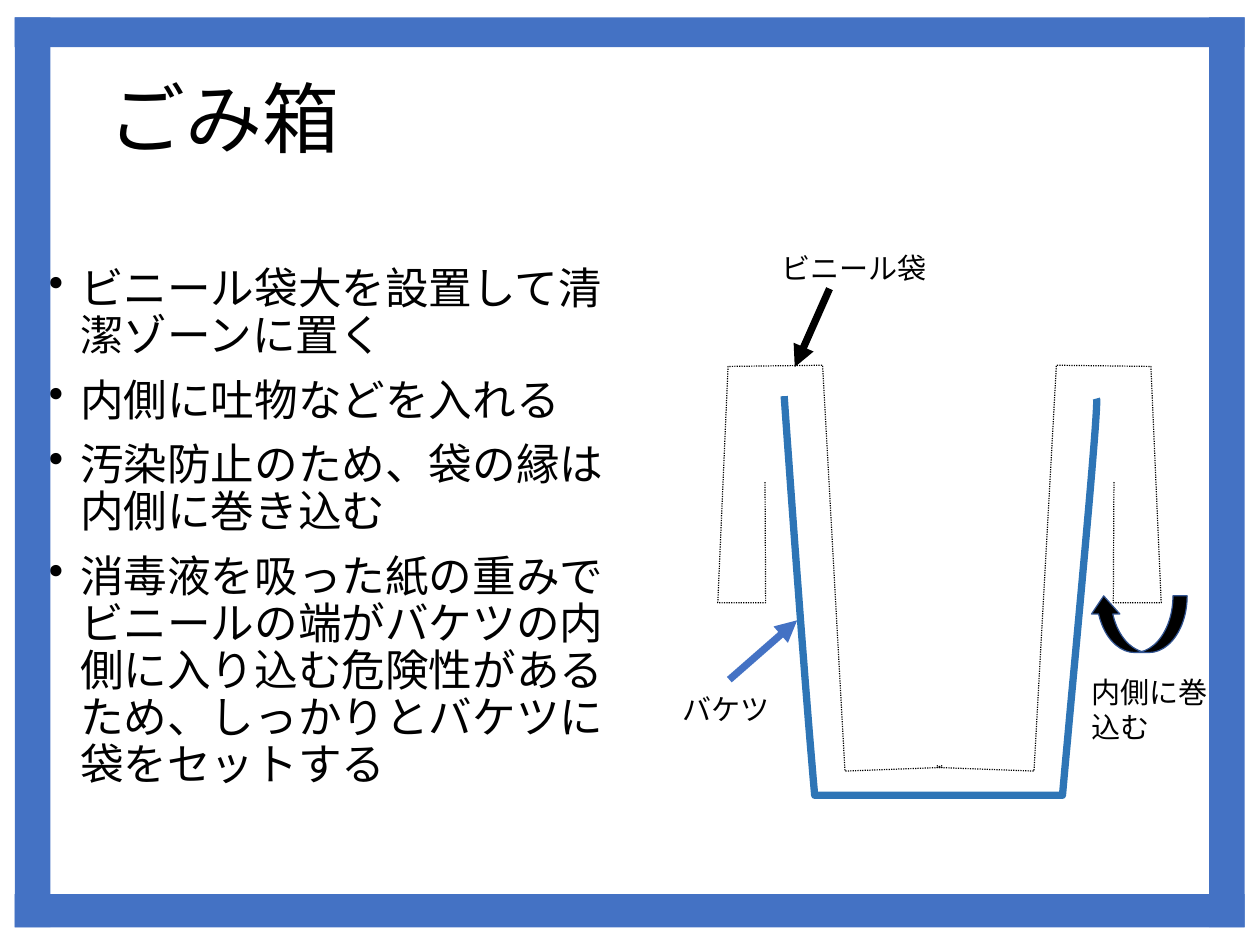
from dataclasses import dataclass

from lxml.etree import SubElement
from pptx import Presentation
from pptx.dml.color import RGBColor
from pptx.enum.dml import MSO_LINE
from pptx.enum.shapes import MSO_CONNECTOR, MSO_SHAPE
from pptx.enum.text import MSO_ANCHOR
from pptx.oxml.ns import qn
from pptx.util import Pt


@dataclass(frozen=True)
class Theme:
    font: str = "Calibri"
    title_size: float = 63.5
    body_size: float = 36
    label_size: float = 24
    thick: float = 6
    thin: float = 1
    ink: RGBColor = RGBColor(0, 0, 0)
    frame: RGBColor = RGBColor(0x44, 0x72, 0xC4)
    bucket: RGBColor = RGBColor(0x2E, 0x75, 0xB6)
    outline: RGBColor = RGBColor(0x32, 0x54, 0x91)


THEME = Theme()
BULLETS = [
    "ビニール袋大を設置して清潔ゾーンに置く",
    "内側に吐物などを入れる",
    "汚染防止のため、袋の縁は内側に巻き込む",
    "消毒液を吸った紙の重みでビニールの端がバケツの内側に入り込む危険性があるため、しっかりとバケツに袋をセットする",
]


def add_text(slide, box, lines, size):
    """Add a wrapping text box with one paragraph per line."""
    text_frame = slide.shapes.add_textbox(*map(Pt, box)).text_frame
    text_frame.word_wrap = True
    text_frame.text = "\n".join(lines)
    for paragraph in text_frame.paragraphs:
        paragraph.font.name = THEME.font
        paragraph.font.size = Pt(size)
        paragraph.font.color.rgb = THEME.ink
    return text_frame


def add_outline(slide, points, color, width):
    """Add an open, unfilled outline through the points."""
    start, *rest = [(Pt(x), Pt(y)) for x, y in points]
    builder = slide.shapes.build_freeform(*start)
    builder.add_line_segments(rest, close=False)
    shape = builder.convert_to_shape()
    shape.shadow.inherit = False
    shape.fill.background()
    shape.line.color.rgb = color
    shape.line.width = Pt(width)
    return shape


def add_arrow(slide, start, end, color):
    arrow = slide.shapes.add_connector(
        MSO_CONNECTOR.STRAIGHT, *map(Pt, (*start, *end)))
    arrow.line.color.rgb = color
    arrow.line.width = Pt(THEME.thick)
    properties = arrow._element.spPr
    SubElement(properties.find(qn("a:ln")), qn("a:tailEnd"), type="triangle")
    SubElement(properties, qn("a:effectLst"))


def curve(start, control_1, control_2, end, steps=24):
    """Return points along a cubic curve."""
    points = []
    for step in range(steps + 1):
        t = step / steps
        weights = ((1 - t) ** 3, 3 * t * (1 - t) ** 2, 3 * t * t * (1 - t), t ** 3)
        corners = (start, control_1, control_2, end)
        points.append(tuple(
            sum(weight * corner[axis] for weight, corner in zip(weights, corners))
            for axis in (0, 1)))
    return points


def add_title(slide, box):
    text_frame = add_text(slide, box, ["ごみ箱"], THEME.title_size)
    text_frame.vertical_anchor = MSO_ANCHOR.MIDDLE
    text_frame.paragraphs[0].line_spacing = 0.9


def add_bullets(slide, box):
    text_frame = add_text(slide, box, BULLETS, THEME.body_size)
    for paragraph in text_frame.paragraphs:
        paragraph.line_spacing = 0.9
        paragraph.space_before = Pt(14.4)
        properties = paragraph._p.get_or_add_pPr()
        properties.set("marL", str(Pt(26)))
        properties.set("indent", str(Pt(-26)))
        bullet = SubElement(properties, qn("a:buChar"), char="•")
        properties.find(qn("a:defRPr")).addprevious(bullet)


def add_bin_diagram(slide, box):
    left, top, width, height = box

    def at(x, y):
        return left + x, top + y

    # Bag: left half and its mirror image
    axis = 219.5
    bag_half = [(75.5, 195), (76, 294.5), (36.5, 294.5), (45, 99.5),
                (123, 98.5), (141.5, 433.5), (221.5, 430.5), (217.3, 429)]
    mirrored_half = [(2 * axis - x, y) for x, y in bag_half]
    for half in (bag_half, mirrored_half):
        outline = add_outline(slide, [at(*point) for point in half],
                              THEME.ink, THEME.thin)
        outline.line.dash_style = MSO_LINE.ROUND_DOT

    # Bucket
    right_wall = curve((349, 126), (352, 124), (330.5, 348), (321, height))
    left_wall = curve((116.5, height), (107, 348), (91.3, 124), (91.3, 124))
    add_outline(slide, [at(*point) for point in right_wall + left_wall],
                THEME.bucket, THEME.thick)

    # Roll-in arrow
    roll = slide.shapes.add_shape(
        MSO_SHAPE.CURVED_UP_ARROW, *map(Pt, (*at(343.3, 288.8), 80.6, 46.8)))
    roll.shadow.inherit = False
    roll.adjustments[2] = 0.32
    roll.fill.solid()
    roll.fill.fore_color.rgb = THEME.ink
    roll.line.color.rgb = THEME.outline
    roll.line.width = Pt(THEME.thin)
    roll._element.spPr.find(qn("a:xfrm")).set("flipH", "1")

    # Pointers and labels
    add_arrow(slide, at(46, 358), at(102, 309), THEME.frame)
    add_arrow(slide, at(128.7, 35.3), at(100, 100), THEME.ink)
    for text, x, y, label_width, label_height in (
            ("ビニール袋", 82, 0, 160.6, 36),
            ("バケツ", 0, 364.4, 108, 36),
            ("内側に巻き込む", 337.5, 350, width - 337.5, 65.5)):
        add_text(slide, (*at(x, y), label_width, label_height),
                 [text], THEME.label_size)


def add_frame(slide, box):
    left, top, width, height = box
    side, head, foot = 29.5, 24.5, 27.4
    for bar in ((left, top, side, height),
                (left, top, width, head),
                (left + width - side, top, side, height),
                (left, top + height - foot, width, foot)):
        shape = slide.shapes.add_shape(MSO_SHAPE.RECTANGLE, *map(Pt, bar))
        shape.shadow.inherit = False
        shape.fill.solid()
        shape.fill.fore_color.rgb = THEME.frame
        shape.line.fill.background()


def main():
    presentation = Presentation()
    presentation.slide_width, presentation.slide_height = Pt(1040), Pt(780)
    slide = presentation.slides.add_slide(presentation.slide_layouts[6])
    add_bullets(slide, (33, 216.7, 500.4, 507))
    add_bin_diagram(slide, (556, 203, 491.5, 453.5))
    add_title(slide, (82.8, 38.9, 886.3, 124.6))
    add_frame(slide, (12.2, 14.4, 1015.2, 751))
    presentation.save("out.pptx")


if __name__ == "__main__":
    main()
